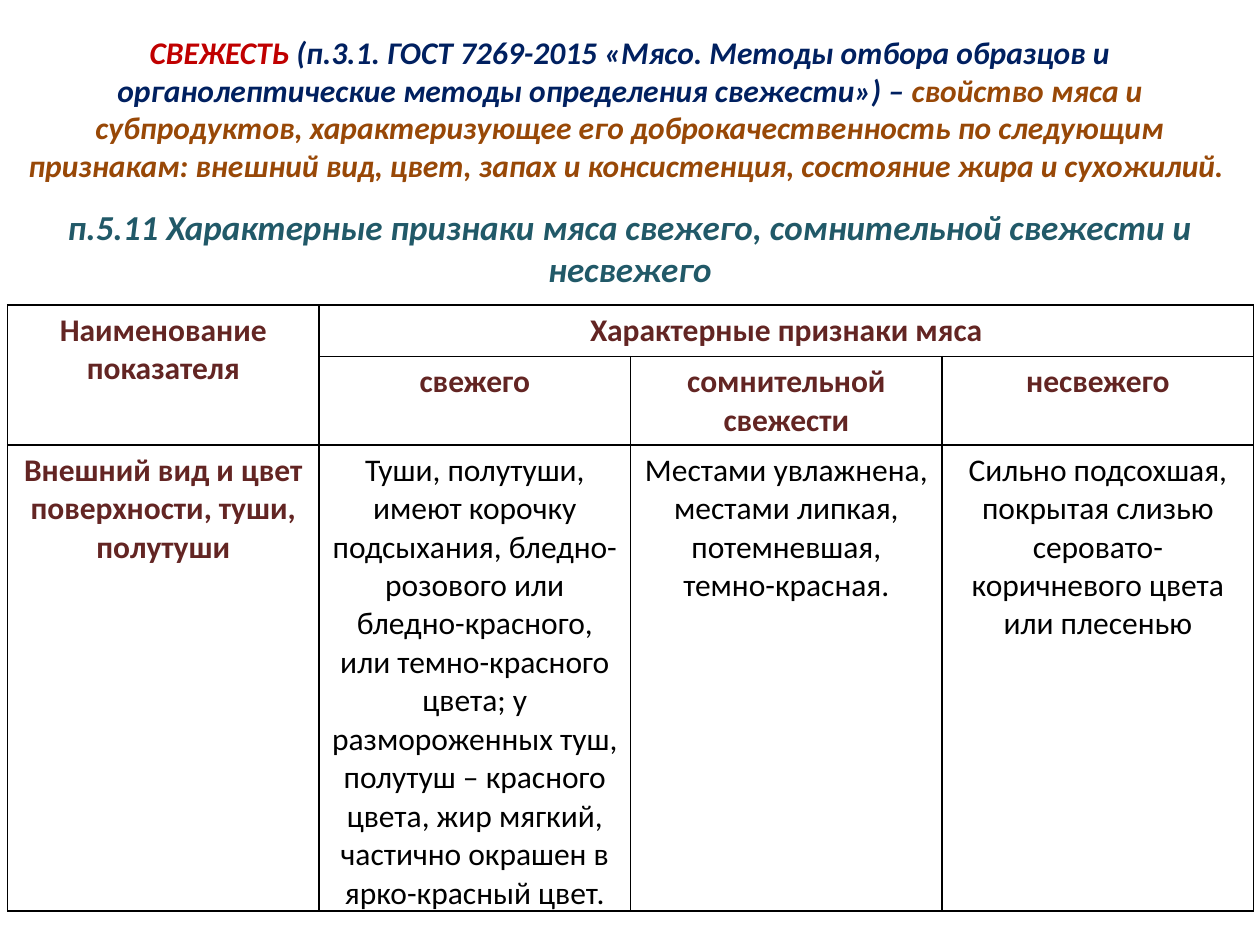
from lxml import etree
from pptx import Presentation
from pptx.dml.color import RGBColor
from pptx.enum.text import MSO_ANCHOR, PP_ALIGN
from pptx.oxml.ns import qn
from pptx.util import Inches, Pt

CENTER = PP_ALIGN.CENTER
MIDDLE = MSO_ANCHOR.MIDDLE
TOP = MSO_ANCHOR.TOP
FONT = "Calibri"
BLACK, MAROON = "000000", "632523"

DEFINITION = [
    ("СВЕЖЕСТЬ ", "C00000"),
    ("(п.3.1. ГОСТ 7269-2015 «Мясо. Методы отбора образцов и органолептические "
     "методы определения свежести») – ", "002060"),
    ("свойство мяса и субпродуктов, характеризующее его доброкачественность по "
     "следующим признакам: внешний вид, цвет, запах и консистенция, состояние "
     "жира и сухожилий. ", "984807"),
]
SUBTITLE = [
    ("п.5.11 Характерные признаки мяса свежего, сомнительной свежести и несвежего", "215968"),
]
ROWS = [
    ["Наименование показателя", "Характерные признаки мяса", "", ""],
    ["", "свежего", "сомнительной свежести", "несвежего"],
    ["Внешний вид и цвет поверхности, туши, полутуши",
     "Туши, полутуши, имеют корочку подсыхания, бледно-розового или бледно-красного, "
     "или темно-красного цвета; у размороженных туш, полутуш – красного цвета, жир "
     "мягкий, частично окрашен в ярко-красный цвет.",
     "Местами увлажнена, местами липкая, потемневшая, темно-красная.",
     "Сильно подсохшая, покрытая слизью серовато-коричневого цвета или плесенью"],
]
MERGES = [((0, 0), (1, 0)), ((0, 1), (0, 3))]
ROW_HEIGHTS = [0.41, 0.7, 3.7]
TABLE_LEFT, TABLE_TOP, TABLE_WIDTH = 0.06, 2.42, 9.89


def rgb(value):
    return RGBColor.from_string(value)


def write(tf, runs, size=18, bold=True, italic=False, anchor=TOP):
    tf.word_wrap = True
    tf.vertical_anchor = anchor
    p = tf.paragraphs[0]
    p.alignment = CENTER
    for text, color in runs:
        r = p.add_run()
        r.text = text
        r.font.name = FONT
        r.font.size = Pt(size)
        r.font.bold = bold
        r.font.italic = italic
        r.font.color.rgb = rgb(color)


def add_text(slide, box, runs, **fmt):
    sp = slide.shapes.add_textbox(*(Inches(v) for v in box))
    write(sp.text_frame, runs, italic=True, **fmt)


def add_borders(cell, color=BLACK, width=1):
    tc_pr = cell._tc.get_or_add_tcPr()
    for i, side in enumerate(("a:lnL", "a:lnR", "a:lnT", "a:lnB")):
        ln = etree.Element(qn(side), w=str(Pt(width)))
        fill = etree.SubElement(ln, qn("a:solidFill"))
        etree.SubElement(fill, qn("a:srgbClr"), val=color)
        tc_pr.insert(i, ln)


def add_signs_table(slide):
    n_rows, n_cols = len(ROWS), len(ROWS[0])
    table = slide.shapes.add_table(
        n_rows, n_cols, Inches(TABLE_LEFT), Inches(TABLE_TOP),
        Inches(TABLE_WIDTH), Inches(sum(ROW_HEIGHTS))).table
    table.first_row = table.horz_banding = False
    for col in table.columns:
        col.width = Inches(TABLE_WIDTH / n_cols)
    for row, height in zip(table.rows, ROW_HEIGHTS):
        row.height = Inches(height)
    for start, end in MERGES:
        table.cell(*start).merge(table.cell(*end))
    for i, texts in enumerate(ROWS):
        for j, text in enumerate(texts):
            cell = table.cell(i, j)
            cell.fill.background()
            add_borders(cell)
            body = i == n_rows - 1
            if body:
                cell.margin_bottom = 0
            if text:
                plain = body and j > 0
                write(cell.text_frame, [(text, BLACK if plain else MAROON)], bold=not plain)


def main():
    prs = Presentation()
    prs.slide_width, prs.slide_height = Inches(10), Inches(7.5)
    slide = prs.slides.add_slide(prs.slide_layouts[6])
    add_text(slide, (0, 0.17, 10, 1.38), DEFINITION, anchor=MIDDLE)
    add_text(slide, (0, 1.58, 10, 0.77), SUBTITLE, size=20)
    add_signs_table(slide)
    prs.save("out.pptx")


if __name__ == "__main__":
    main()
